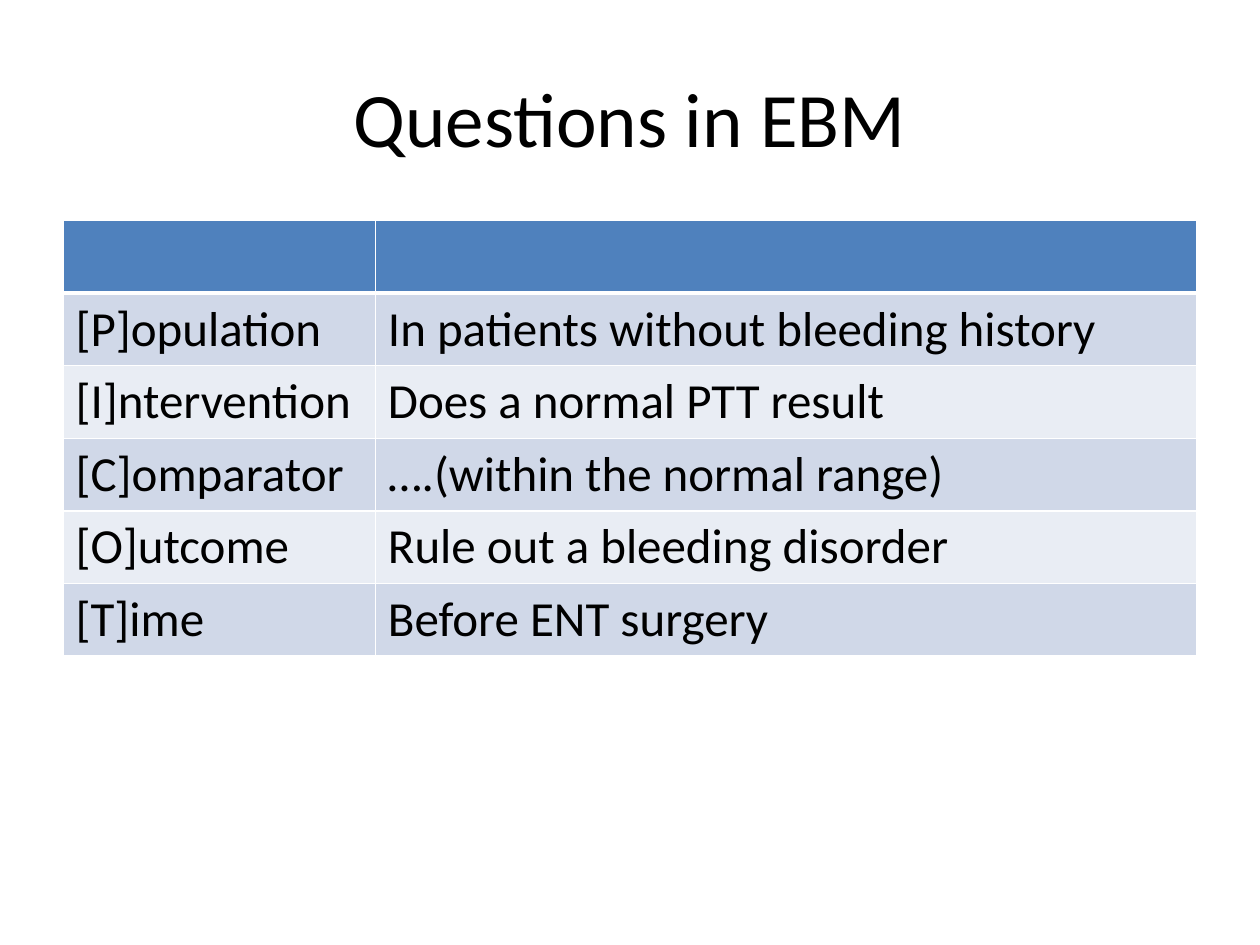
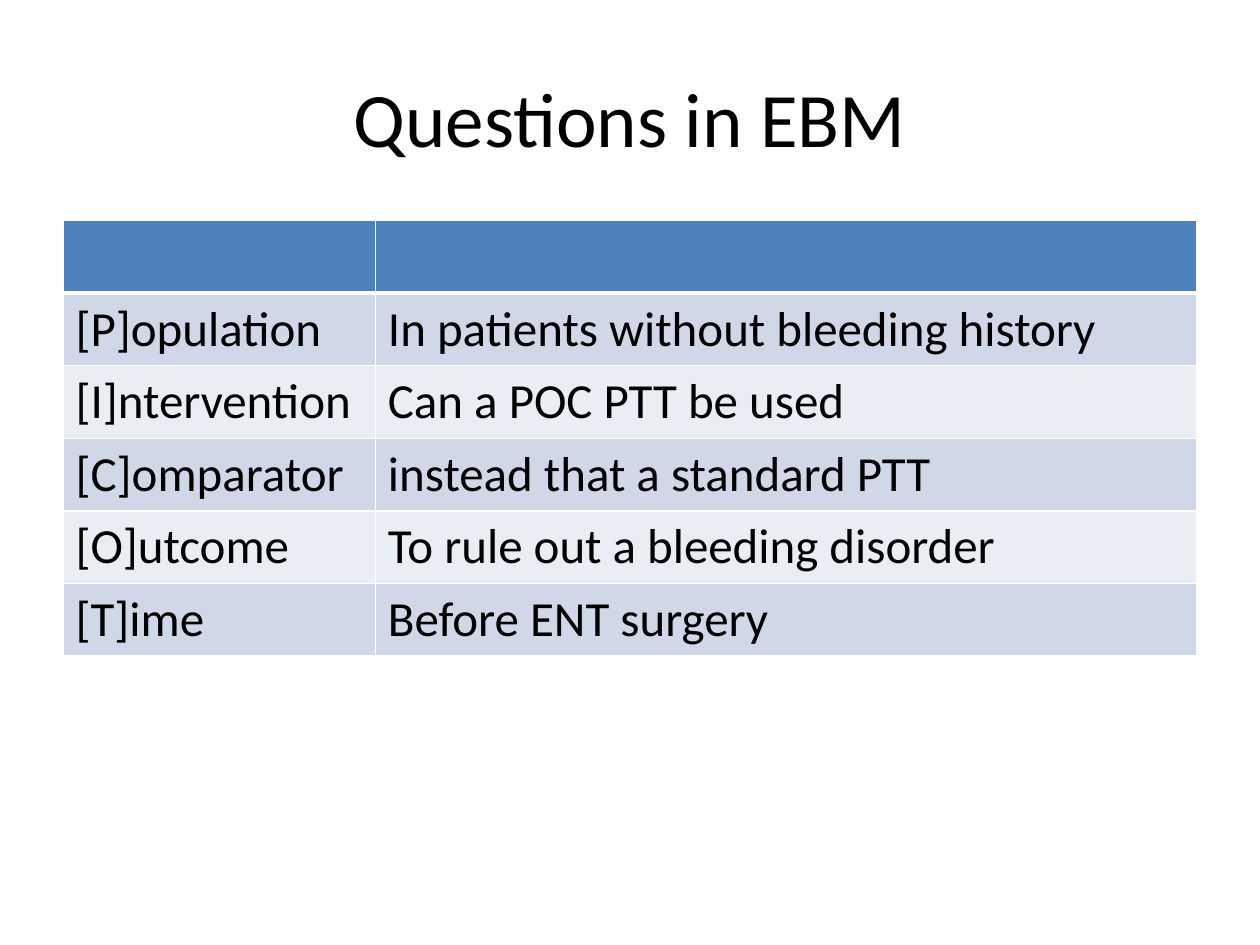
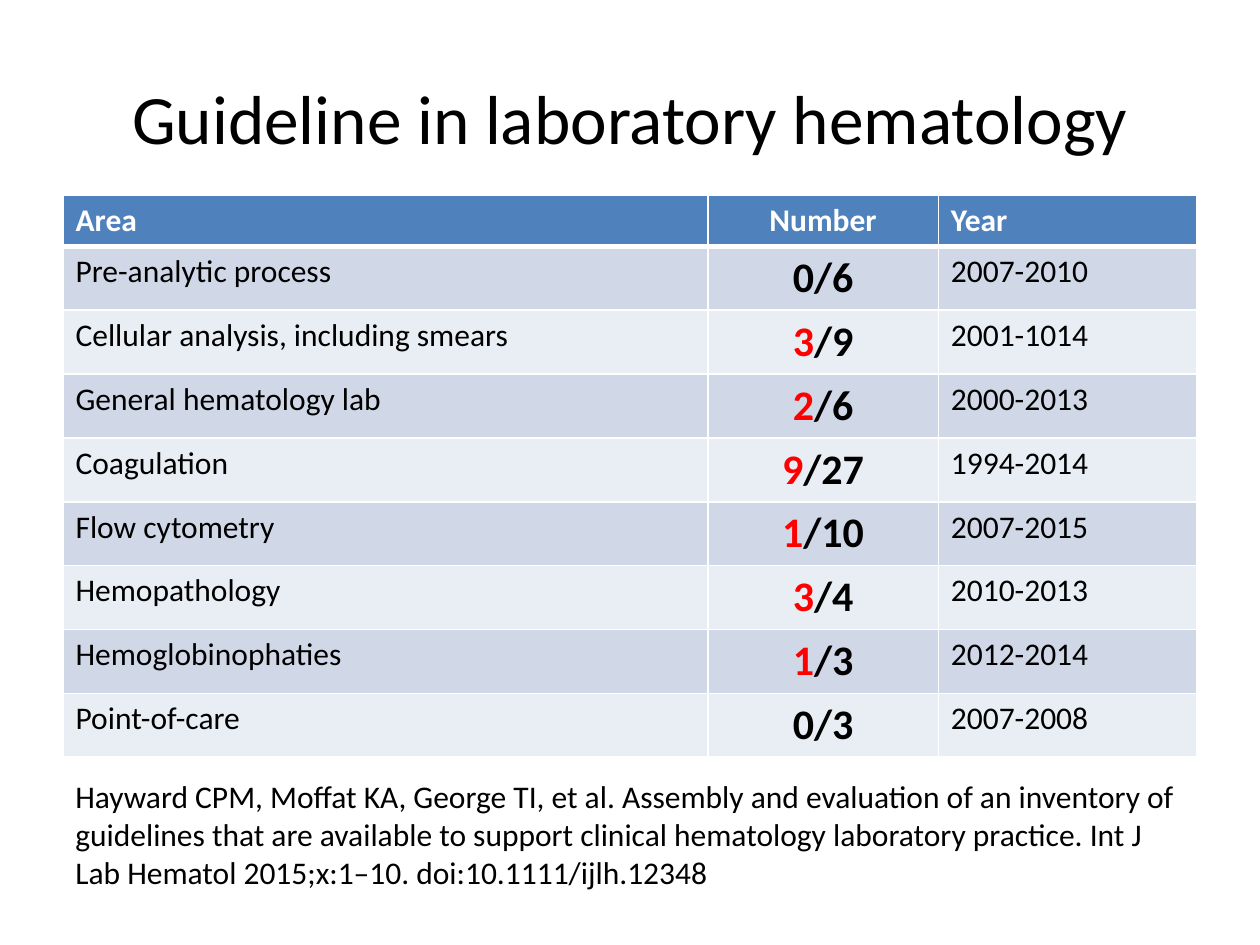
from lxml.etree import SubElement
from pptx import Presentation
from pptx.dml.color import RGBColor
from pptx.enum.text import MSO_ANCHOR, PP_ALIGN
from pptx.oxml.ns import qn
from pptx.util import Pt

BLACK, WHITE, RED = "000000", "FFFFFF", "FF0000"
HEADER, BANDS = "4F81BD", ("D0D8E8", "E9EDF4")
LEFT, WIDTH = 36, 648
PICO_LABELS = ("[P]opulation", "[I]ntervention", "[C]omparator", "[O]utcome", "[T]ime")


def rgb(value):
    """Return the colour for a hex string."""
    return RGBColor.from_string(value)


def write(p, text, size=18, color=BLACK, bold=False, align=PP_ALIGN.LEFT):
    """Add a run of formatted text to a paragraph."""
    p.alignment = align
    r = p.add_run()
    r.text = text
    r.font.name = "Calibri"
    r.font.size = Pt(size)
    r.font.bold = bold
    r.font.color.rgb = rgb(color)


def set_borders(cell, **widths):
    """Draw white borders of the given widths in points."""
    tcPr = cell._tc.get_or_add_tcPr()
    for side in "LRTB":
        ln = SubElement(tcPr, qn(f"a:ln{side}"), w=str(Pt(widths.get(side, 1))))
        SubElement(SubElement(ln, qn("a:solidFill")), qn("a:srgbClr"), val=WHITE)


class Deck:
    """Hold the presentation style and the current slide."""

    def __init__(self):
        """Open a presentation with 10 by 7.5 inch slides."""
        self.prs = Presentation()
        self.prs.slide_width, self.prs.slide_height = Pt(720), Pt(540)

    def slide(self, title, size=44):
        """Start a slide with a centred title."""
        self.s = self.prs.slides.add_slide(self.prs.slide_layouts[6])
        self.text(title, 21.6, 90, MSO_ANCHOR.MIDDLE, size=size, align=PP_ALIGN.CENTER)

    def text(self, text, top, height, anchor=MSO_ANCHOR.TOP, **fmt):
        """Add a full-width wrapped text box."""
        tf = self.s.shapes.add_textbox(Pt(LEFT), Pt(top), Pt(WIDTH), Pt(height)).text_frame
        tf.word_wrap = True
        tf.vertical_anchor = anchor
        write(tf.paragraphs[0], text, **fmt)

    def table(self, top, col_widths, header_height, row_height, rows):
        """Add an empty banded table and return it."""
        height = header_height + row_height * (rows - 1)
        table = self.s.shapes.add_table(
            rows, len(col_widths), Pt(LEFT), Pt(top), Pt(WIDTH), Pt(height)).table
        for column, width in zip(table.columns, col_widths):
            column.width = Pt(width)
        for i, row in enumerate(table.rows):
            row.height = Pt(row_height if i else header_height)
            for cell in row.cells:
                set_borders(cell, T=3 if i == 1 else 1, B=1 if i else 3)
                cell.fill.solid()
                cell.fill.fore_color.rgb = rgb(BANDS[(i - 1) % 2] if i else HEADER)
        return table

    def pico(self, answers):
        """Add a slide that splits a clinical question into its parts."""
        self.slide("Questions in EBM")
        table = self.table(126, (178.5, 469.5), 41.5, 41.5, len(answers) + 1)
        for i, texts in enumerate(zip(PICO_LABELS, answers), 1):
            for j, text in enumerate(texts):
                write(table.cell(i, j).text_frame.paragraphs[0], text, size=28)

    def guidelines(self, heads, areas):
        """Add a table of guideline counts, with nonzero counts in red."""
        table = self.table(111.6, (368.5, 131.75, 147.75), 29.2, 36.5, len(areas) + 1)
        for j, head in enumerate(heads):
            write(table.cell(0, j).text_frame.paragraphs[0], head, color=WHITE, bold=True,
                  align=PP_ALIGN.CENTER if j == 1 else PP_ALIGN.LEFT)
        for i, (area, count, total, years) in enumerate(areas, 1):
            name, number, year = (c.text_frame.paragraphs[0] for c in table.rows[i].cells)
            write(name, area)
            fmt = dict(size=24, bold=True, align=PP_ALIGN.CENTER)
            if count:
                write(number, str(count), color=RED, **fmt)
                write(number, f"/{total}", **fmt)
            else:
                write(number, f"{count}/{total}", **fmt)
            write(year, years)


def main():
    """Build the three slides."""
    deck = Deck()
    deck.pico(("In patients without bleeding history", "Does a normal PTT result",
               "….(within the normal range)", "Rule out a bleeding disorder",
               "Before ENT surgery"))
    deck.pico(("In patients without bleeding history", "Can a POC PTT be used",
               "instead that a standard PTT", "To rule out a bleeding disorder",
               "Before ENT surgery"))
    deck.slide("Guideline in laboratory hematology", size=39.6)
    deck.guidelines(("Area", "Number", "Year"), (
        ("Pre-analytic process", 0, 6, "2007-2010"),
        ("Cellular analysis, including smears", 3, 9, "2001-1014"),
        ("General hematology lab", 2, 6, "2000-2013"),
        ("Coagulation", 9, 27, "1994-2014"),
        ("Flow cytometry", 1, 10, "2007-2015"),
        ("Hemopathology", 3, 4, "2010-2013"),
        ("Hemoglobinophaties", 1, 3, "2012-2014"),
        ("Point-of-care", 0, 3, "2007-2008"),
    ))
    deck.text("Hayward CPM, Moffat KA, George TI, et al. Assembly and evaluation of an "
              "inventory of guidelines that are available to support clinical hematology "
              "laboratory practice. Int J Lab Hematol 2015;x:1–10. doi:10.1111/ijlh.12348",
              440.6, 72.7)
    deck.prs.save("out.pptx")


if __name__ == "__main__":
    main()
